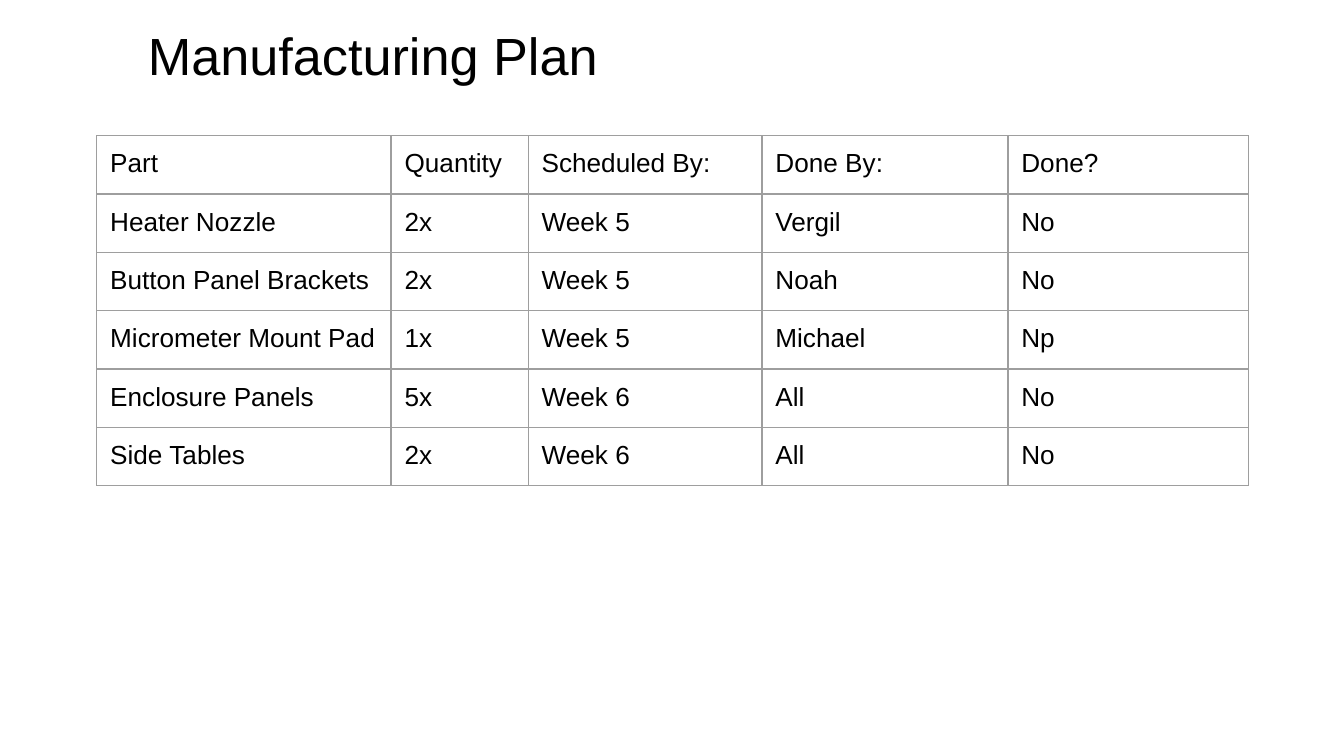
"""Build the manufacturing plan slide: a title above a parts schedule table."""
from dataclasses import dataclass

from pptx import Presentation
from pptx import oxml, util as u
from pptx.dml.color import RGBColor
from pptx.enum import text
from pptx.oxml import ns


@dataclass(frozen=True)
class Theme:
    font: str = "Arial"
    ink: str = "000000"
    border: str = "9E9E9E"
    border_width: float = 0.75
    title_size: int = 28
    cell_size: int = 14
    inset: float = 0.1


theme = Theme()


def write(frame, content, size, color=theme.ink, align=text.PP_ALIGN.LEFT):
    paragraph = frame.paragraphs[0]
    paragraph.alignment = align
    run = paragraph.add_run()
    run.text = content
    run.font.name = theme.font
    run.font.size = u.Pt(size)
    run.font.color.rgb = RGBColor.from_string(color)


def set_borders(cell):
    properties = cell._tc.get_or_add_tcPr()
    for index, side in enumerate(("lnL", "lnR", "lnT", "lnB")):
        line = oxml.parse_xml(
            f'<a:{side} {ns.nsdecls("a")} w="{u.Pt(theme.border_width)}">'
            f'<a:solidFill><a:srgbClr val="{theme.border}"/></a:solidFill></a:{side}>'
        )
        properties.insert(index, line)


presentation = Presentation()
presentation.slide_width = u.Inches(10)
presentation.slide_height = u.Inches(10 * 9 / 16)
slide = presentation.slides.add_slide(presentation.slide_layouts[5])

title = slide.shapes.title
title.left, title.top = u.Inches(1), u.Inches(0.07)
title.width, title.height = u.Inches(8), u.Inches(0.67)
frame = title.text_frame
frame.word_wrap = True
frame.auto_size = text.MSO_AUTO_SIZE.SHAPE_TO_FIT_TEXT
frame.vertical_anchor = text.MSO_ANCHOR.TOP
frame.margin_left = frame.margin_right = u.Inches(theme.inset)
frame.margin_top = frame.margin_bottom = u.Inches(theme.inset)
write(frame, "Manufacturing Plan", size=theme.title_size)

schedule = [
    ("Part", "Quantity", "Scheduled By:", "Done By:", "Done?"),
    ("Heater Nozzle", "2x", "Week 5", "Vergil", "No"),
    ("Button Panel Brackets", "2x", "Week 5", "Noah", "No"),
    ("Micrometer Mount Pad", "1x", "Week 5", "Michael", "Np"),
    ("Enclosure Panels", "5x", "Week 6", "All", "No"),
    ("Side Tables", "2x", "Week 6", "All", "No"),
]
column_widths = [2.19, 1.02, 1.74, 1.83, 1.79]
row_height = 0.41

table = slide.shapes.add_table(
    len(schedule), len(column_widths), u.Inches(0.72), u.Inches(1.01),
    u.Inches(sum(column_widths)), u.Inches(row_height * len(schedule)),
).table
table.first_row = table.horz_banding = False
for column, width in zip(table.columns, column_widths):
    column.width = u.Inches(width)

for row, entries in zip(table.rows, schedule):
    row.height = u.Inches(row_height)
    for cell, entry in zip(row.cells, entries):
        cell.fill.background()
        cell.margin_left = cell.margin_right = u.Inches(theme.inset)
        cell.margin_top = cell.margin_bottom = u.Inches(theme.inset)
        set_borders(cell)
        write(cell.text_frame, entry, size=theme.cell_size)

presentation.save("out.pptx")
